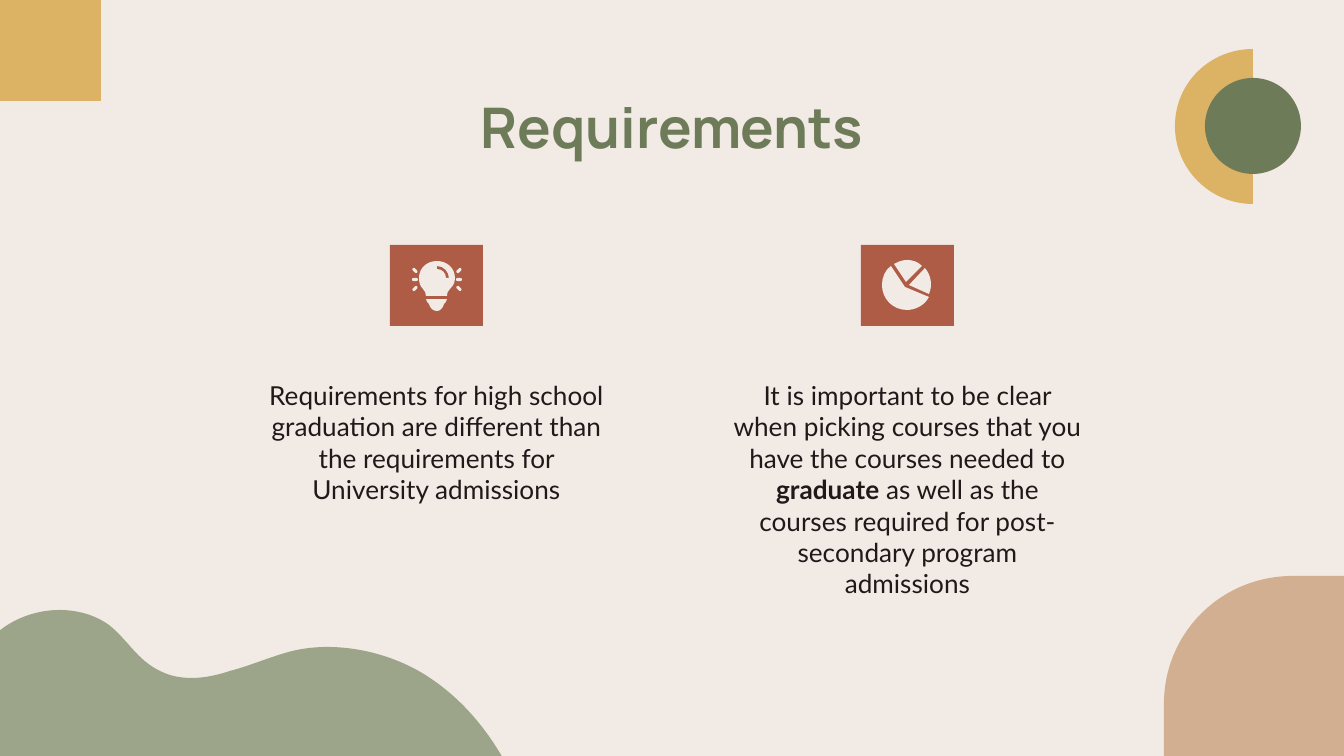
"""Build the Requirements slide with two icon-topped text columns."""
from lxml.etree import SubElement
from pptx import Presentation
from pptx.dml.color import RGBColor
from pptx.enum.shapes import MSO_SHAPE as Shape
from pptx.enum.text import MSO_ANCHOR as Anchor, MSO_AUTO_SIZE as AutoSize, PP_ALIGN as Align
from pptx.oxml.ns import qn
from pptx.util import Pt

PX = 914400 / 134.4
THEME = {
    "paper": "F1EAE5", "gold": "DCB364", "moss": "6E7B59", "sage": "9CA589",
    "tan": "D3AF92", "rust": "AF5C46", "ink": "1F191A",
    "title": {"name": "Manrope", "size": Pt(30), "bold": True},
    "body": {"name": "Lato", "size": Pt(14), "bold": False},
}

TITLE = ("Requirements", (106, 79, 1132, 70))
COLUMNS = [
    (249, [("Requirements for high school graduation are different than "
            "the requirements for University admissions", False)]),
    (720, [("It is important to be clear when picking courses that you have "
            "the courses needed to ", False),
           ("graduate", True),
           (" as well as the courses required for post-secondary program admissions", False)]),
]
COLUMN_TOP, COLUMN_WIDTH, COLUMN_HEIGHT = 366, 375, 102
TILE_TOP, TILE_WIDTH, TILE_HEIGHT = 245, 93, 81

CORNER = [[(1293, 576), (1221, 576, 1164, 633, 1164, 704), (1164, 756), (1344, 756), (1344, 576)]]
HILLS = [[(59, 610), (34, 610, 7, 621, -8, 638), (-4, 765), (441, 767), (508, 767),
          (489, 732, 464, 700, 427, 676), (399, 658, 363, 647, 327, 647),
          (317, 647, 307, 648, 297, 650), (274, 655, 253, 665, 230, 671),
          (218, 675, 205, 678, 192, 678), (180, 678, 170, 676, 160, 671),
          (137, 660, 128, 640, 109, 625), (95, 615, 78, 610, 59, 610)]]
HALF_DISC = [[(1253, 49), (1253, 204), (1210, 204, 1175, 169, 1175, 126),
              (1175, 83, 1210, 49, 1253, 49)]]
PIE_SLICES = [
    [[(891, 266), (885, 270, 882, 278, 882, 285), (882, 299, 893, 310, 907, 310),
      (916, 310, 925, 305, 929, 297), (905, 287)]],
    [[(894, 264), (898, 262, 902, 260, 907, 260), (913, 260, 918, 262, 922, 266), (906, 282)]],
    [[(925, 268), (909, 285), (929, 294), (933, 285, 931, 275, 925, 268)]],
]
BULB_PARTS = [
    [[(437, 261), (447, 261, 455, 268, 455, 278), (455, 283, 453, 286, 450, 289),
      (448, 291, 447, 293, 447, 296), (426, 296), (426, 293, 425, 291, 423, 289),
      (420, 286, 419, 282, 419, 278), (419, 268, 427, 261, 437, 261)],
     [(437, 266), (444, 266, 449, 272, 449, 278), (446, 278), (446, 273, 442, 269, 437, 269)]],
    [[(426, 299), (447, 299), (447, 301, 445, 303, 444, 304), (443, 308, 440, 311, 437, 311),
      (433, 311, 430, 308, 429, 304), (428, 303, 426, 301, 426, 299)]],
]
RAY_SIDES = [(412, 1), (456, -1)]
RAY_ROWS = [(269, 45), (278, 0), (287, -45)]
RAY_SIZE = (6, 3)


def emu(*lengths):
    return [round(length * PX) for length in lengths]


def color(name):
    return RGBColor.from_string(THEME[name])


def paint(shape, fill):
    shape.shadow.inherit = False
    shape.fill.solid()
    shape.fill.fore_color.rgb = color(fill)
    shape.line.fill.background()
    return shape


def add_preset(shapes, kind, frame, fill):
    return paint(shapes.add_shape(kind, *emu(*frame)), fill)


def bend(shape, segments):
    lines = list(shape.element.iter(qn("a:lnTo")))
    for line, segment in zip(lines, segments):
        if len(segment) == 2:
            continue
        line.tag = qn("a:cubicBezTo")
        line.remove(line[0])
        values = emu(*segment)
        for x, y in zip(values[::2], values[1::2]):
            SubElement(line, qn("a:pt"), x=str(x - shape.left), y=str(y - shape.top))


def add_outline(shapes, contours, fill):
    builder = shapes.build_freeform(*emu(*contours[0][0]), scale=1.0)
    for index, contour in enumerate(contours):
        if index:
            builder.move_to(*emu(*contour[0]))
        builder.add_line_segments([emu(*segment[-2:]) for segment in contour[1:]], close=True)
    shape = builder.convert_to_shape()
    bend(shape, [segment for contour in contours for segment in contour[1:]])
    return paint(shape, fill)


def write(box, spans, style, ink):
    frame = box.text_frame
    layout = {"word_wrap": True, "auto_size": AutoSize.NONE, "vertical_anchor": Anchor.TOP}
    layout.update({f"margin_{side}": Pt(7.2) for side in ("left", "right", "top", "bottom")})
    for key, value in layout.items():
        setattr(frame, key, value)
    para = frame.paragraphs[0]
    para.alignment = Align.CENTER
    for text, strong in spans:
        span = para.add_run()
        span.text = text
        for key, value in {**THEME[style], "bold": strong}.items():
            setattr(span.font, key, value)
        span.font.color.rgb = color(ink)


def add_icon(shapes, parts):
    icon = shapes.add_group_shape()
    for part in parts:
        add_outline(icon.shapes, part, "paper")
    return icon


def main():
    deck = Presentation()
    deck.slide_width, deck.slide_height = emu(1344, 756)
    page = deck.slides.add_slide(deck.slide_layouts[5])
    page.background.fill.solid()
    page.background.fill.fore_color.rgb = color("paper")
    shapes = page.shapes

    add_preset(shapes, Shape.RECTANGLE, (0, 0, 101, 101), "gold")
    add_outline(shapes, CORNER, "tan")
    add_outline(shapes, HILLS, "sage")

    text, frame = TITLE
    title = shapes.title
    for side, value in zip(("left", "top", "width", "height"), emu(*frame)):
        setattr(title, side, value)
    write(title, [(text, THEME["title"]["bold"])], "title", "moss")

    for left, spans in COLUMNS:
        box = shapes.add_textbox(*emu(left, COLUMN_TOP, COLUMN_WIDTH, COLUMN_HEIGHT))
        write(box, spans, "body", "ink")
        tile_left = left + (COLUMN_WIDTH - TILE_WIDTH) / 2
        add_preset(shapes, Shape.RECTANGLE, (tile_left, TILE_TOP, TILE_WIDTH, TILE_HEIGHT), "rust")

    add_icon(shapes, PIE_SLICES)
    bulb = add_icon(shapes, BULB_PARTS)
    for left, direction in RAY_SIDES:
        for top, angle in RAY_ROWS:
            ray = add_preset(bulb.shapes, Shape.ROUNDED_RECTANGLE, (left, top, *RAY_SIZE), "paper")
            ray.adjustments[0] = 0.5
            ray.rotation = angle * direction

    emblem = shapes.add_group_shape()
    add_outline(emblem.shapes, HALF_DISC, "gold")
    add_preset(emblem.shapes, Shape.OVAL, (1205, 78, 96, 96), "moss")
    deck.save("out.pptx")


if __name__ == "__main__":
    main()
